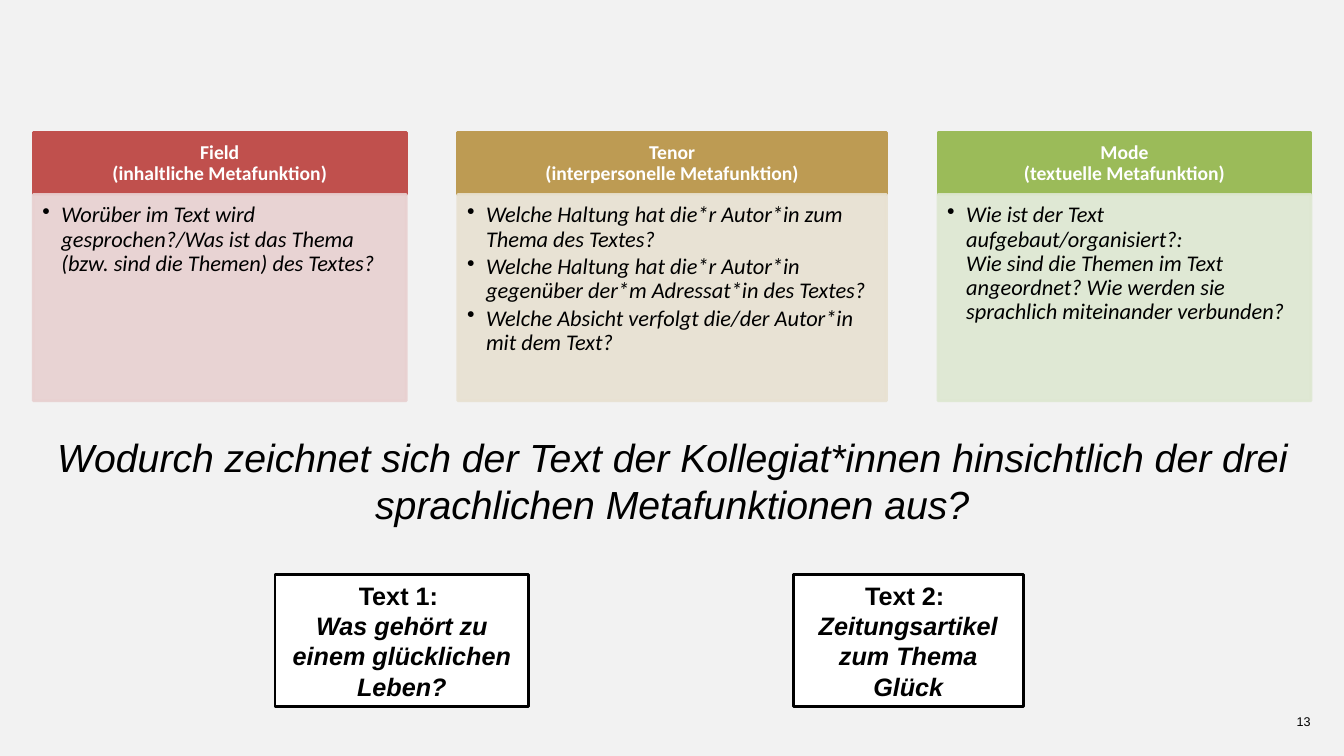
import dataclasses

import pptx
import pptx.dml.color
import pptx.enum.shapes
import pptx.enum.text
import pptx.oxml
import pptx.oxml.ns
import pptx.util
from lxml import etree

Cm = pptx.util.Cm
Pt = pptx.util.Pt
Align = pptx.enum.text.PP_ALIGN
Anchor = pptx.enum.text.MSO_ANCHOR


@dataclasses.dataclass(frozen=True)
class Theme:
    background: str = "F2F2F2"
    ink: str = "000000"
    paper: str = "FFFFFF"
    heading_font: str = "Calibri"
    text_font: str = "Arial"
    number_size: float = 9
    header_size: float = 14
    bullet_size: float = 16
    label_size: float = 18
    question_size: float = 28
    outline: float = 2
    panel_opacity: int = 90


@dataclasses.dataclass(frozen=True)
class Box:
    left: float
    top: float
    width: float
    height: float

    def lengths(self):
        return [Cm(value) for value in dataclasses.astuple(self)]


THEME = Theme()
MARGIN = 0.84
COLUMN_GAP = 1.3
COLUMN_TOP = 3.35
COLUMN_HEIGHT = 6.75
HEADER_HEIGHT = 1.55

# Heading, subheading, header colour, panel colour, width, questions
COLUMNS = [
    ("Field", "(inhaltliche Metafunktion)", "C0504D", "E8D0D0", 9.4,
     ["Worüber im Text wird gesprochen?/Was ist das Thema "
      "(bzw. sind die Themen) des Textes?"]),
    ("Tenor", "(interpersonelle Metafunktion)", "BD9B53", "E8E1D1", 10.8,
     ["Welche Haltung hat die*r Autor*in zum Thema des Textes?",
      "Welche Haltung hat die*r Autor*in gegenüber der*m Adressat*in des Textes?",
      "Welche Absicht verfolgt die/der Autor*in mit dem Text?"]),
    ("Mode", "(textuelle Metafunktion)", "9BBB59", "DEE7D1", 9.4,
     ["Wie ist der Text aufgebaut/organisiert?:\n"
      "Wie sind die Themen im Text angeordnet? "
      "Wie werden sie sprachlich miteinander verbunden?"]),
]
TEXT_CARDS = [
    (Box(6.93, 14.48, 6.4, 3.33), "Text 1: ", "Was gehört zu einem glücklichen Leben?"),
    (Box(19.99, 14.48, 5.8, 3.33), "Text 2: ", "Zeitungsartikel zum Thema Glück"),
]
QUESTION = ("Wodurch zeichnet sich der Text der Kollegiat*innen hinsichtlich "
            "der drei sprachlichen Metafunktionen aus?")


def rgb(value):
    return pptx.dml.color.RGBColor.from_string(value)


def add_span(para, text, font, size, color=THEME.ink, bold=False, italic=False):
    """Add text to a paragraph, with a line break at each newline."""
    for index, line in enumerate(text.split("\n")):
        if index:
            para.add_line_break()
        span = para.add_run()
        span.text = line
        span.font.name = font
        span.font.size = Pt(size)
        span.font.color.rgb = rgb(color)
        span.font.bold = bold
        span.font.italic = italic


def set_frame(frame, insets, anchor=Anchor.TOP, wrap=True):
    frame.word_wrap = wrap
    frame.vertical_anchor = anchor
    (frame.margin_left, frame.margin_top,
     frame.margin_right, frame.margin_bottom) = [Cm(inset) for inset in insets]


def add_rectangle(page, box, fill, line):
    shape = page.shapes.add_shape(
        pptx.enum.shapes.MSO_SHAPE.RECTANGLE, *box.lengths())
    shape.shadow.inherit = False
    shape.fill.solid()
    shape.fill.fore_color.rgb = rgb(fill)
    shape.line.color.rgb = rgb(line)
    shape.line.width = Pt(THEME.outline)
    return shape


def set_opacity(shape, percent):
    for color in shape.element.spPr.iter(pptx.oxml.ns.qn("a:srgbClr")):
        alpha = etree.SubElement(color, pptx.oxml.ns.qn("a:alpha"))
        alpha.set("val", str(percent * 1000))


def add_bullet(para, indent):
    properties = para._p.get_or_add_pPr()
    properties.set("marL", str(Cm(indent)))
    properties.set("indent", str(-Cm(indent)))
    bullet = etree.SubElement(properties, pptx.oxml.ns.qn("a:buChar"))
    bullet.set("char", "•")


def add_column(page, box, heading, subheading, header_color, panel_color, questions):
    header_box = dataclasses.replace(box, height=HEADER_HEIGHT)
    header = add_rectangle(page, header_box, header_color, header_color)
    set_frame(header.text_frame, (0.28, 0.15, 0.28, 0.15), Anchor.MIDDLE)
    para = header.text_frame.paragraphs[0]
    para.alignment = Align.CENTER
    para.line_spacing = 0.9
    add_span(para, f"{heading}\n{subheading}", THEME.heading_font,
             THEME.header_size, THEME.paper, bold=True)

    panel_box = dataclasses.replace(
        box, top=box.top + HEADER_HEIGHT, height=box.height - HEADER_HEIGHT)
    panel = add_rectangle(page, panel_box, panel_color, panel_color)
    set_opacity(panel, THEME.panel_opacity)
    frame = panel.text_frame
    set_frame(frame, (0.23, 0.23, 0.3, 0.36))
    for index, question in enumerate(questions):
        para = frame.add_paragraph() if index else frame.paragraphs[0]
        add_bullet(para, 0.48)
        para.alignment = Align.LEFT
        para.line_spacing = 0.9
        para.space_after = Pt(2.4)
        add_span(para, question, THEME.heading_font, THEME.bullet_size, italic=True)


def add_text_card(page, box, label, title):
    card = add_rectangle(page, box, THEME.paper, THEME.ink)
    set_frame(card.text_frame, (0.25, 0.13, 0.25, 0.13), Anchor.MIDDLE)
    para = card.text_frame.paragraphs[0]
    para.alignment = Align.CENTER
    add_span(para, label, THEME.text_font, THEME.label_size, bold=True)
    para.add_line_break()
    add_span(para, title, THEME.text_font, THEME.label_size, bold=True, italic=True)


def add_plain_text(page, box, text, size, alignment, wrap=True, italic=False):
    frame = page.shapes.add_textbox(*box.lengths()).text_frame
    set_frame(frame, (0, 0, 0, 0), wrap=wrap)
    para = frame.paragraphs[0]
    para.alignment = alignment
    add_span(para, text, THEME.text_font, size, italic=italic)
    return para


def main():
    deck = pptx.Presentation()
    deck.slide_width, deck.slide_height = Cm(33.87), Cm(19.05)
    page = deck.slides.add_slide(deck.slide_layouts[6])
    page.background.fill.solid()
    page.background.fill.fore_color.rgb = rgb(THEME.background)

    left = MARGIN
    for heading, subheading, header_color, panel_color, width, questions in COLUMNS:
        add_column(page, Box(left, COLUMN_TOP, width, COLUMN_HEIGHT),
                   heading, subheading, header_color, panel_color, questions)
        left += width + COLUMN_GAP

    question = add_plain_text(page, Box(MARGIN, 10.92, 32.2, 2.8), QUESTION,
                              THEME.question_size, Align.CENTER, italic=True)
    question.line_spacing = Pt(33.6)
    for box, label, title in TEXT_CARDS:
        add_text_card(page, box, label, title)
    add_plain_text(page, Box(32.03, 17.98, 1, 0.56), "13",
                   THEME.number_size, Align.RIGHT, wrap=False)
    deck.save("out.pptx")


if __name__ == "__main__":
    main()
